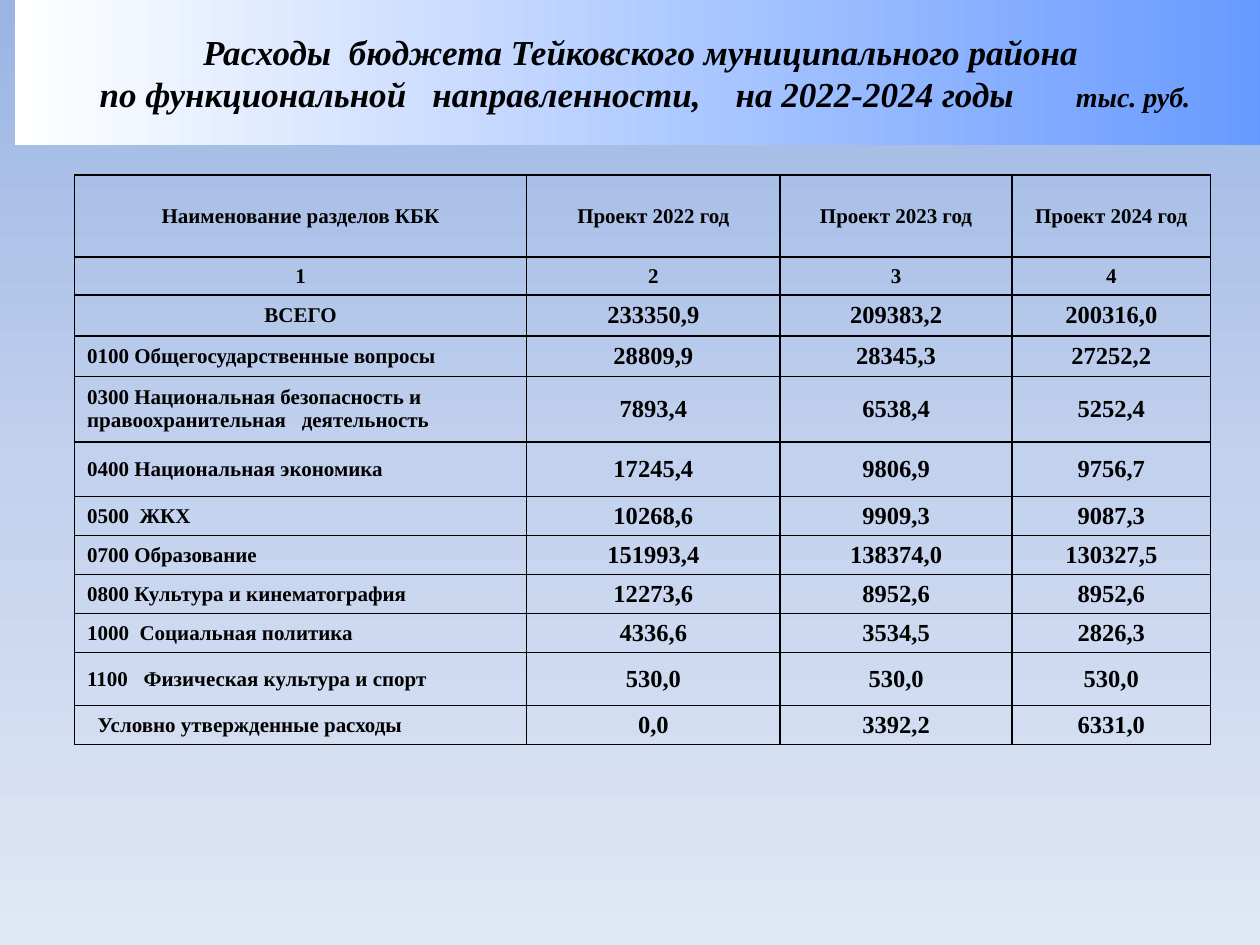
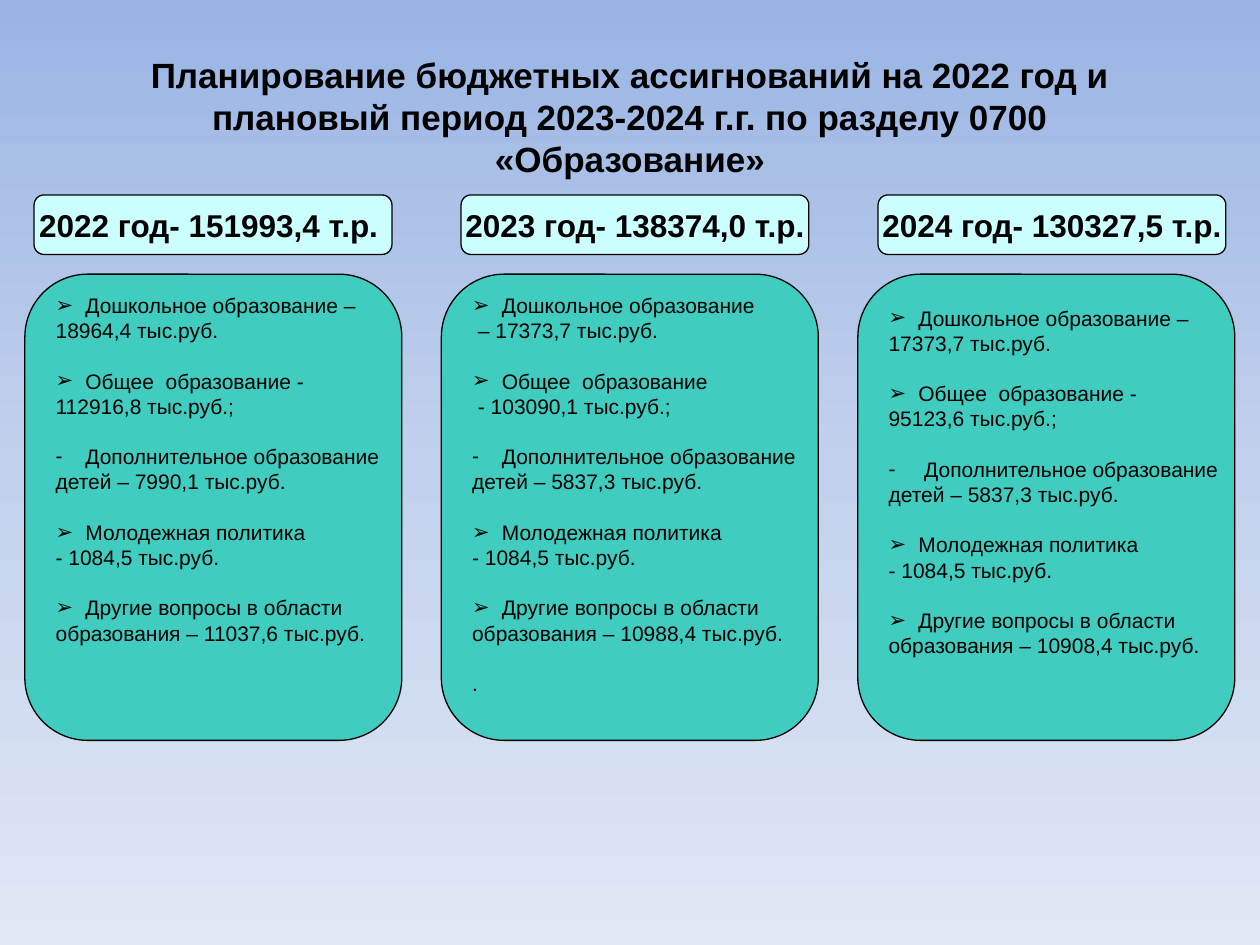
"""Builds two slides on the district budget: spending by section and education funding."""
from copy import deepcopy

from lxml.etree import SubElement
from pptx import Presentation
from pptx.dml.color import RGBColor
from pptx.enum.shapes import MSO_SHAPE
from pptx.enum.text import MSO_ANCHOR, MSO_AUTO_SIZE, PP_ALIGN
from pptx.oxml.ns import qn
from pptx.util import Pt

BLACK = RGBColor(0x00, 0x00, 0x00)
WHITE = RGBColor(0xFF, 0xFF, 0xFF)
BAND_BLUE = RGBColor(0x66, 0x99, 0xFF)
SKY_TOP = RGBColor(0x9A, 0xB5, 0xE4)
SKY_MIDDLE = RGBColor(0xC2, 0xD1, 0xED)
SKY_BOTTOM = RGBColor(0xE1, 0xE8, 0xF5)
TEAL = RGBColor(0x40, 0xCC, 0xBF)
PALE_CYAN = RGBColor(0xCC, 0xFF, 0xFF)
SERIF = "Times New Roman"
SANS = "Arial"


def format_paragraph(paragraph, font_name, size, bold=False, italic=False, alignment=PP_ALIGN.LEFT):
    paragraph.alignment = alignment
    for run in paragraph.runs:
        run.font.name = font_name
        run.font.size = Pt(size)
        run.font.bold = bold
        run.font.italic = italic
        run.font.color.rgb = BLACK


def add_rounded_box(slide, left, top, width, height, color):
    shape = slide.shapes.add_shape(
        MSO_SHAPE.ROUNDED_RECTANGLE, Pt(left), Pt(top), Pt(width), Pt(height))
    shape.shadow.inherit = False
    shape.fill.solid()
    shape.fill.fore_color.rgb = color
    shape.line.color.rgb = BLACK
    shape.line.width = Pt(0.75)
    shape.text_frame.word_wrap = False
    return shape


presentation = Presentation()
presentation.slide_width = Pt(720)
presentation.slide_height = Pt(540)

master = presentation.slide_master
sky = master.background.fill
sky.gradient()
sky.gradient_angle = 270
stop_list = master.element.xpath(".//p:bg//a:gsLst")[0]
stop_list.insert(1, deepcopy(stop_list[0]))
for stop, position, color in zip(sky.gradient_stops, (0, 0.5, 1), (SKY_TOP, SKY_MIDDLE, SKY_BOTTOM)):
    stop.position = position
    stop.color.rgb = color

title_specs = [
    ("Расходы  бюджета Тейковского муниципального района \n"
     "по функциональной   направленности,    на 2022-2024 годы       ",
     SERIF, True, (8.6, 0, 720, 82.8)),
    ("Планирование бюджетных ассигнований на 2022 год и плановый период "
     "2023-2024 г.г. по разделу 0700 «Образование»",
     SANS, False, (36, 21.6, 648, 90)),
]
slides = []
for text, font_name, italic, bounds in title_specs:
    slide = presentation.slides.add_slide(presentation.slide_layouts[5])
    title = slide.shapes.title
    title.left, title.top, title.width, title.height = map(Pt, bounds)
    title.text_frame.text = text
    title.text_frame.auto_size = MSO_AUTO_SIZE.NONE
    title.text_frame.vertical_anchor = MSO_ANCHOR.MIDDLE
    for paragraph in title.text_frame.paragraphs:
        format_paragraph(paragraph, font_name, 20, True, italic, PP_ALIGN.CENTER)
        paragraph.line_spacing = Pt(24)
    slides.append(slide)
budget_slide, education_slide = slides

band = budget_slide.shapes.title
band.fill.gradient()
band.fill.gradient_angle = 0
for stop, position, color in zip(band.fill.gradient_stops, (0, 1), (WHITE, BAND_BLUE)):
    stop.position = position
    stop.color.rgb = color
unit_paragraph = band.text_frame.paragraphs[1]
unit_run = unit_paragraph.add_run()
unit_run.text = "тыс. руб."
format_paragraph(unit_paragraph, SERIF, 20, True, True, PP_ALIGN.CENTER)
unit_run.font.size = Pt(16)

budget_rows = [
    (46.9, "Наименование разделов КБК", "Проект 2022 год", "Проект 2023 год", "Проект 2024 год"),
    (21.6, "1", "2", "3", "4"),
    (23.4, "ВСЕГО", "233350,9", "209383,2", "200316,0"),
    (23.4, "0100 Общегосударственные вопросы", "28809,9", "28345,3", "27252,2"),
    (37.2, "0300 Национальная безопасность и правоохранительная   деятельность",
     "7893,4", "6538,4", "5252,4"),
    (31.3, "0400 Национальная экономика", "17245,4", "9806,9", "9756,7"),
    (22.3, "0500  ЖКХ", "10268,6", "9909,3", "9087,3"),
    (22.3, "0700 Образование", "151993,4", "138374,0", "130327,5"),
    (22.3, "0800 Культура и кинематография", "12273,6", "8952,6", "8952,6"),
    (22.3, "1000  Социальная политика", "4336,6", "3534,5", "2826,3"),
    (30.3, "1100   Физическая культура и спорт", "530,0", "530,0", "530,0"),
    (22.3, "  Условно утвержденные расходы", "0,0", "3392,2", "6331,0"),
]
column_widths = (258.4, 144.8, 132.6, 113.4)
table = budget_slide.shapes.add_table(
    len(budget_rows), len(column_widths), Pt(42.6), Pt(100),
    Pt(sum(column_widths)), Pt(sum(row[0] for row in budget_rows))).table
table.horz_banding = False
table.first_row = False
for column, width in zip(table.columns, column_widths):
    column.width = Pt(width)
for row_index, (height, *texts) in enumerate(budget_rows):
    table.rows[row_index].height = Pt(height)
    for column_index, text in enumerate(texts):
        cell = table.cell(row_index, column_index)
        cell.margin_left = cell.margin_right = Pt(7.2)
        cell.margin_top = cell.margin_bottom = 0
        cell.vertical_anchor = MSO_ANCHOR.MIDDLE
        cell.text_frame.text = text
        is_section = column_index == 0 and row_index > 2
        is_amount = column_index > 0 and row_index > 1
        format_paragraph(cell.text_frame.paragraphs[0], SERIF, 14 if is_amount else 12, True,
                         alignment=PP_ALIGN.LEFT if is_section else PP_ALIGN.CENTER)
        properties = cell._tc.get_or_add_tcPr()
        for side in ("a:lnL", "a:lnR", "a:lnT", "a:lnB"):
            border = SubElement(properties, qn(side), w=str(Pt(1)))
            border_fill = SubElement(border, qn("a:solidFill"))
            SubElement(border_fill, qn("a:srgbClr"), val=str(BLACK))
        cell.fill.background()

years = [
    ("2022 год- 151993,4 т.р. ", 19.5, 204.5, 0, [
        ("➢", "Дошкольное образование –", "18964,4 тыс.руб."),
        ("➢", "Общее  образование -", "112916,8 тыс.руб.;"),
        ("-", "Дополнительное образование", "детей – 7990,1 тыс.руб."),
        ("➢", "Молодежная политика", "- 1084,5 тыс.руб."),
        ("➢", "Другие вопросы в области", "образования – 11037,6 тыс.руб."),
    ]),
    ("2023 год- 138374,0 т.р.", 263.5, 198.7, 0, [
        ("➢", "Дошкольное образование", " – 17373,7 тыс.руб."),
        ("➢", "Общее  образование", " - 103090,1 тыс.руб.;"),
        ("-", "Дополнительное образование", "детей – 5837,3 тыс.руб."),
        ("➢", "Молодежная политика", "- 1084,5 тыс.руб."),
        ("➢", "Другие вопросы в области", "образования – 10988,4 тыс.руб."),
        (None, "."),
    ]),
    ("2024 год- 130327,5 т.р.", 501.8, 198.7, 7.2, [
        ("➢", "Дошкольное образование –", "17373,7 тыс.руб."),
        ("➢", "Общее  образование -", "95123,6 тыс.руб.;"),
        ("-", " Дополнительное образование", "детей – 5837,3 тыс.руб."),
        ("➢", "Молодежная политика", "- 1084,5 тыс.руб."),
        ("➢", "Другие вопросы в области", "образования – 10908,4 тыс.руб."),
    ]),
]
for year_index, (total, total_left, total_width, top_margin, items) in enumerate(years):
    total_box = add_rounded_box(education_slide, total_left, 111.4, total_width, 34, PALE_CYAN)
    total_box.text_frame.text = total
    total_box.text_frame.vertical_anchor = MSO_ANCHOR.MIDDLE
    format_paragraph(total_box.text_frame.paragraphs[0], SANS, 18, True, alignment=PP_ALIGN.CENTER)

    panel = add_rounded_box(education_slide, 14.2 + 238 * year_index, 156.7, 215.4, 266.4, TEAL)
    panel_frame = panel.text_frame
    panel_frame.vertical_anchor = MSO_ANCHOR.TOP
    panel_frame.margin_top = Pt(top_margin)
    panel_frame.text = "\n".join(line for item in items for line in item[1:])
    paragraphs = iter(panel_frame.paragraphs)
    for bullet, *lines in items:
        for line_index, line in enumerate(lines):
            paragraph = next(paragraphs)
            format_paragraph(paragraph, SANS, 12)
            paragraph.line_spacing = Pt(14.4)
            if bullet and line_index == 0:
                properties = paragraph._p.get_or_add_pPr()
                properties.set("marL", str(Pt(17)))
                properties.set("indent", str(-Pt(17)))
                SubElement(properties, qn("a:buFont"), typeface=SANS)
                SubElement(properties, qn("a:buChar"), char=bullet)
        paragraph.space_after = Pt(14.4)

presentation.save("out.pptx")
